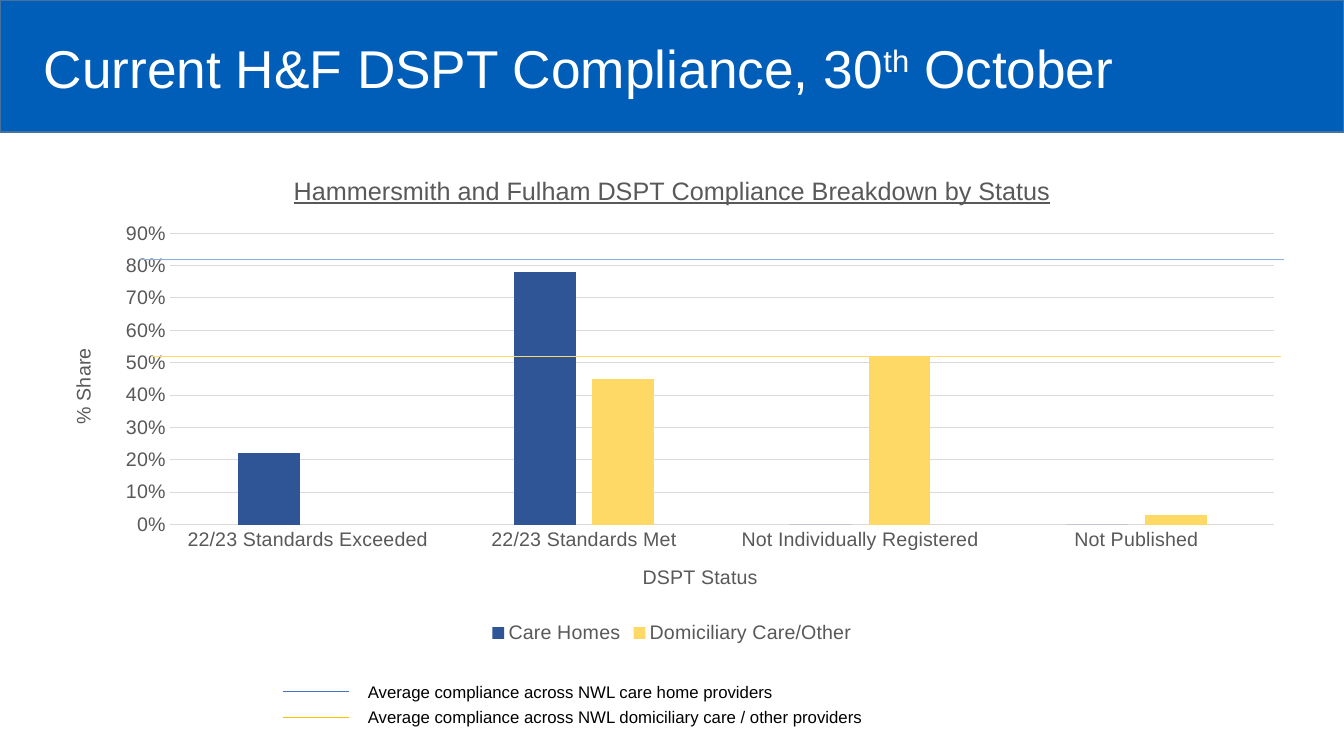
from lxml.etree import SubElement as Sub
from pptx import Presentation
from pptx.chart.data import CategoryChartData as Data
from pptx.dml.color import RGBColor as Rgb
from pptx.enum.chart import XL_CHART_TYPE as Kind, XL_LEGEND_POSITION as Spot
from pptx.enum.chart import XL_TICK_MARK as Tick
from pptx.enum.shapes import MSO_CONNECTOR as Link, MSO_SHAPE as Form
from pptx.enum.text import MSO_ANCHOR as Anchor, MSO_AUTO_SIZE as Fit, PP_ALIGN as Align
from pptx.oxml import parse_xml
from pptx.oxml.ns import nsdecls, qn
from pptx.util import Inches, Pt

FONT = "Arial"
HUES = {
    "band": "005EB8", "edge": "43739E", "white": "FFFFFF", "black": "000000",
    "grey": "595959", "grid": "D9D9D9", "navy": "2F5597", "sand": "FFD966",
    "sky": "8FAADC", "blue": "4472C4", "gold": "FFC000",
}
WIDE, HIGH = Inches(13.33), Inches(7.5)


def hue(name):
    return Rgb.from_string(HUES[name])


def area(x, y, w, h):
    """Turn percentages of the slide into lengths."""
    return [int(side * part / 100)
            for side, part in zip((WIDE, HIGH, WIDE, HIGH), (x, y, w, h))]


def style(font, size=14, color="grey", line=None):
    font.name, font.size, font.bold = FONT, Pt(size), False
    font.color.rgb = hue(color)
    if line is not None:
        font.underline = line


def stroke(line, color, width):
    line.color.rgb = hue(color)
    line.width = Pt(width)


def write(frame, *parts, size=12, color="black", anchor=Anchor.TOP, wrap=True, line=None):
    """Fill a frame; a part given as (text, percent) is raised."""
    frame.word_wrap = wrap
    frame.auto_size = Fit.NONE
    frame.vertical_anchor = anchor
    para = frame.paragraphs[0]
    para.alignment = Align.LEFT
    for part in parts:
        text, lift = part if isinstance(part, tuple) else (part, 0)
        run = para.add_run()
        run.text = text
        style(run.font, size, color, line)
        if lift:
            run._r.get_or_add_rPr().set("baseline", str(lift * 1000))


def rule(slide, left, right, y, color):
    """Draw a thin level line."""
    x1, y1, x2, y2 = area(left, y, right, y)
    line = slide.shapes.add_connector(Link.STRAIGHT, x1, y1, x2, y2)
    stroke(line.line, color, 0.5)
    Sub(line._element.spPr, qn("a:effectLst"))


def head(slide):
    """Place the title on its band."""
    title = slide.shapes.title
    band = slide.shapes.add_shape(Form.RECTANGLE, *area(0, 0, 100, 17.47))
    band.shadow.inherit = False
    band.fill.solid()
    band.fill.fore_color.rgb = hue("band")
    stroke(band.line, "edge", 1)
    title._element.addprevious(band._element)

    title.left, title.top, title.width, title.height = area(2.5, 4, 95, 9.87)
    title.fill.solid()
    title.fill.fore_color.rgb = hue("band")
    write(title.text_frame, "Current H&F DSPT Compliance, 30", ("th", 30), " October",
          size=38, color="white", anchor=Anchor.MIDDLE)


def label(owner, text, size=14, line=None):
    """Give a chart or an axis its title."""
    run = (owner.chart_title if hasattr(owner, "chart_title")
           else owner.axis_title).text_frame.paragraphs[0].add_run()
    run.text = text
    style(run.font, size, line=line)


def place(plot, x, y, w, h):
    """Fix the inner plot area as shares of the chart."""
    old = plot.find(qn("c:layout"))
    if old is not None:
        plot.remove(old)
    sides = "".join(f'<c:{tag} val="{val}"/>'
                    for tag, val in zip("xywh", (x, y, w, h)))
    plot.insert(0, parse_xml(
        f'<c:layout {nsdecls("c")}><c:manualLayout><c:layoutTarget val="inner"/>'
        f'<c:xMode val="edge"/><c:yMode val="edge"/>{sides}'
        '</c:manualLayout></c:layout>'))


def graph(slide):
    """Add the column chart of shares by status."""
    data = Data(number_format="0%")
    data.categories = ["22/23 Standards Exceeded", "22/23 Standards Met",
                       "Not Individually Registered", "Not Published"]
    data.add_series("Care Homes", [0.22, 0.78, 0, 0])
    data.add_series("Domiciliary Care/Other", [None, 0.45, 0.52, 0.03])
    chart = slide.shapes.add_chart(
        Kind.COLUMN_CLUSTERED, *area(3.3, 20.4, 93.4, 65.33), data).chart
    style(chart.font)
    label(chart, "Hammersmith and Fulham DSPT Compliance Breakdown by Status", 18, True)
    chart.chart_title.include_in_layout = False

    # Columns
    plot = chart.plots[0]
    plot.gap_width, plot.overlap, plot.vary_by_categories = 219, -27, False
    for series, color in zip(plot.series, ("navy", "sand")):
        series.format.fill.solid()
        series.format.fill.fore_color.rgb = hue(color)
        series.invert_if_negative = False
    place(chart._chartSpace.chart.plotArea, 0.1, 0.16, 0.88, 0.59)

    # Axes
    cats, vals = chart.category_axis, chart.value_axis
    for axis, text in ((cats, "DSPT Status"), (vals, "% Share")):
        axis.major_tick_mark = axis.minor_tick_mark = Tick.NONE
        style(axis.tick_labels.font)
        label(axis, text)
    stroke(cats.format.line, "grid", 0.75)
    vals.format.line.fill.background()
    stroke(vals.major_gridlines.format.line, "grid", 0.75)
    vals.minimum_scale, vals.maximum_scale, vals.major_unit = 0, 0.9, 0.1
    vals.tick_labels.number_format = "0%"
    vals.tick_labels.number_format_is_linked = False

    # Legend
    chart.has_legend = True
    chart.legend.position = Spot.BOTTOM
    chart.legend.include_in_layout = False
    style(chart.legend.font)


def notes(slide):
    """Explain the average lines below the chart."""
    for row, (who, color) in enumerate((("care home", "blue"),
                                        ("domiciliary care / other", "gold"))):
        y = 89.47 + 3.4 * row
        rule(slide, 21.08, 25.96, y + 2, color)
        box = slide.shapes.add_textbox(*area(26.63, y, 39.6, 4))
        write(box.text_frame, f"Average compliance across NWL {who} providers")


def main():
    deck = Presentation()
    deck.slide_width, deck.slide_height = WIDE, HIGH
    slide = deck.slides.add_slide(deck.slide_layouts[5])
    head(slide)
    graph(slide)
    notes(slide)
    # Average levels across the chart
    rule(slide, 10.43, 95.57, 34.27, "sky")
    rule(slide, 11.25, 95.35, 47.2, "sand")
    deck.save("out.pptx")


if __name__ == "__main__":
    main()
